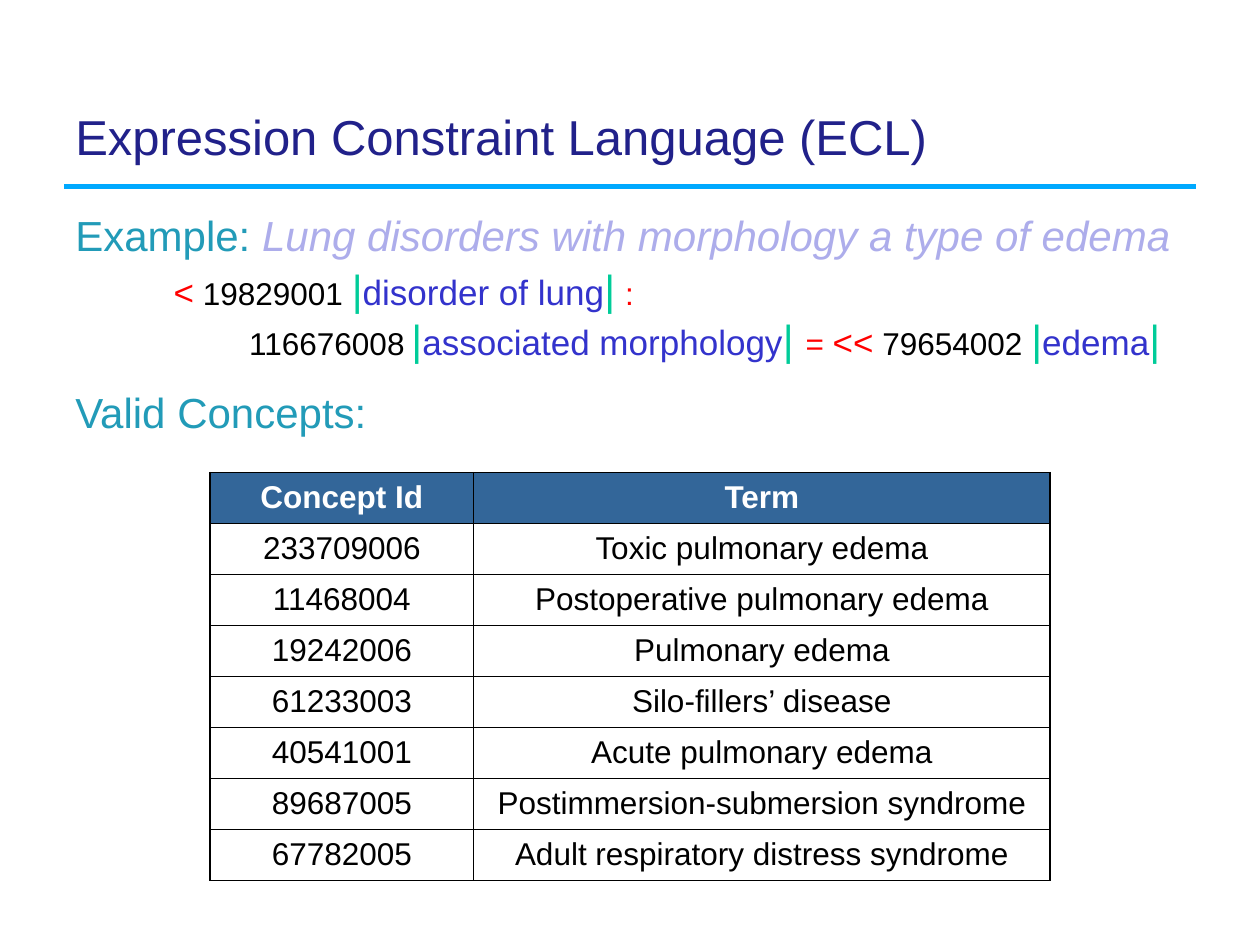
from pptx import Presentation
from pptx import util as u
from pptx.dml.color import RGBColor
from pptx.enum import shapes, text
from pptx.oxml import parse_xml
from pptx.oxml.ns import nsdecls, qn

COLORS = {
    "title": "21218A", "rule": "00A9FF", "heading": "229BB8",
    "example": "ADADEB", "operator": "FF0000", "code": "000000",
    "bar": "00CC99", "term": "3333CC", "header": "336699", "white": "FFFFFF",
}
# Kinds of run: colour and size
KINDS = {
    "title": ("title", 28), "heading": ("heading", 24), "example": ("example", 24),
    "bar": ("bar", 24), "term": ("term", 20), "code": ("code", 18),
    "symbol": ("operator", 20), "mark": ("operator", 18), "gap": ("code", 14),
    "header": ("white", 18),
}
BAR = ("|", "bar")


class SlideBuilder:
    """Holds the style and the current slide; lengths are shares of its size."""
    font = "Arial"

    def __init__(self, deck):
        self.width, self.height = deck.slide_width, deck.slide_height
        self.slide = deck.slides.add_slide(deck.slide_layouts[6])

    def place(self, left, top, width, height):
        return [round(share * side) for share, side in
                zip((left, top, width, height), (self.width, self.height) * 2)]

    def color(self, name):
        return RGBColor.from_string(COLORS[name])

    def add_runs(self, para, runs):
        for words, kind in runs:
            color, size = KINDS[kind]
            span = para.add_run()
            span.text = words
            span.font.name, span.font.size = self.font, u.Pt(size)
            span.font.color.rgb = self.color(color)
            span.font.bold = kind == "header"
            span.font.italic = kind == "example"

    def text(self, area, paragraphs, anchor=text.MSO_ANCHOR.TOP):
        """Each paragraph is (indent in inches, points before, points after, runs)."""
        frame = self.slide.shapes.add_textbox(*self.place(*area)).text_frame
        frame.word_wrap, frame.vertical_anchor = True, anchor
        frame.margin_left = frame.margin_right = u.Inches(0.1)
        frame.margin_top = frame.margin_bottom = u.Inches(0.1)
        for index, (indent, before, after, runs) in enumerate(paragraphs):
            para = frame.add_paragraph() if index else frame.paragraphs[0]
            para.space_before, para.space_after = u.Pt(before), u.Pt(after)
            para._p.get_or_add_pPr().set("marL", str(u.Inches(indent)))
            self.add_runs(para, runs)

    def rule(self, left, right, top, weight):
        x, y, span, _ = self.place(left, top, right - left, 0)
        line = self.slide.shapes.add_connector(
            shapes.MSO_CONNECTOR.STRAIGHT, x, y, x + span, y)
        line.line.color.rgb, line.line.width = self.color("rule"), u.Pt(weight)
        line._element.spPr.append(parse_xml(f"<a:effectLst {nsdecls('a')}/>"))

    def table(self, area, shares, rows):
        place = self.place(*area)
        frame = self.slide.shapes.add_table(len(rows), len(shares), *place)
        table = frame.table
        for column, share in zip(table.columns, shares):
            column.width = round(place[2] * share)
        for row_index, row in enumerate(rows):
            table.rows[row_index].height = place[3] // len(rows)
            for column_index, words in enumerate(row):
                self.cell(table.cell(row_index, column_index), words, row_index == 0)

    def cell(self, cell, words, is_header):
        cell.vertical_anchor = text.MSO_ANCHOR.MIDDLE
        para = cell.text_frame.paragraphs[0]
        para.alignment = text.PP_ALIGN.CENTER
        self.add_runs(para, [(words, "header" if is_header else "code")])
        if is_header:
            cell.fill.solid()
            cell.fill.fore_color.rgb = self.color("header")
        else:
            cell.fill.background()
        # Borders come before the fill in the cell properties
        properties = cell._tc.get_or_add_tcPr()
        for position, side in enumerate(("lnL", "lnR", "lnT", "lnB")):
            properties.insert(position, parse_xml(
                f'<a:{side} {nsdecls("a")} w="{u.Pt(1)}"><a:solidFill>'
                f'<a:srgbClr val="{COLORS["code"]}"/></a:solidFill></a:{side}>'))


def main():
    deck = Presentation()
    deck.slide_width, deck.slide_height = u.Inches(10), u.Inches(7.5)
    page = SlideBuilder(deck)

    # Title and rule
    page.rule(0.051, 0.949, 1.48 / 7.5, 3)
    page.text((0.05, 0.81 / 7.5, 0.8, 0.08),
              [(0, 0, 0, [("Expression Constraint Language (ECL)", "title")])],
              text.MSO_ANCHOR.BOTTOM)

    # Example constraint
    page.text((0.05, 1.56 / 7.5, 0.9, 0.7), [
        (0, 0, 1, [("Example: ", "heading"),
                   ("Lung disorders with morphology a type of edema", "example")]),
        (0.78, 1, 0, [("<", "symbol"), (" 19829001 ", "code"),
                      BAR, ("disorder of lung", "term"), BAR,
                      (" ", "term"), (":", "mark")]),
        (1.38, 0, 1, [("116676008", "code"), (" ", "gap"),
                      BAR, ("associated morphology", "term"), ("| ", "bar"),
                      ("= ", "mark"), ("<<", "symbol"), (" 79654002 ", "code"),
                      BAR, ("edema", "term"), BAR]),
        (0, 12, 1, [("Valid Concepts:", "heading")]),
    ])

    # Matching concepts
    page.table((1 / 6, 0.5, 2 / 3, 3.24 / 7.5), (0.314, 0.686), [
        ("Concept Id", "Term"),
        ("233709006", "Toxic pulmonary edema"),
        ("11468004", "Postoperative pulmonary edema"),
        ("19242006", "Pulmonary edema"),
        ("61233003", "Silo-fillers’ disease"),
        ("40541001", "Acute pulmonary edema"),
        ("89687005", "Postimmersion-submersion syndrome"),
        ("67782005", "Adult respiratory distress syndrome"),
    ])
    deck.save("out.pptx")


if __name__ == "__main__":
    main()
